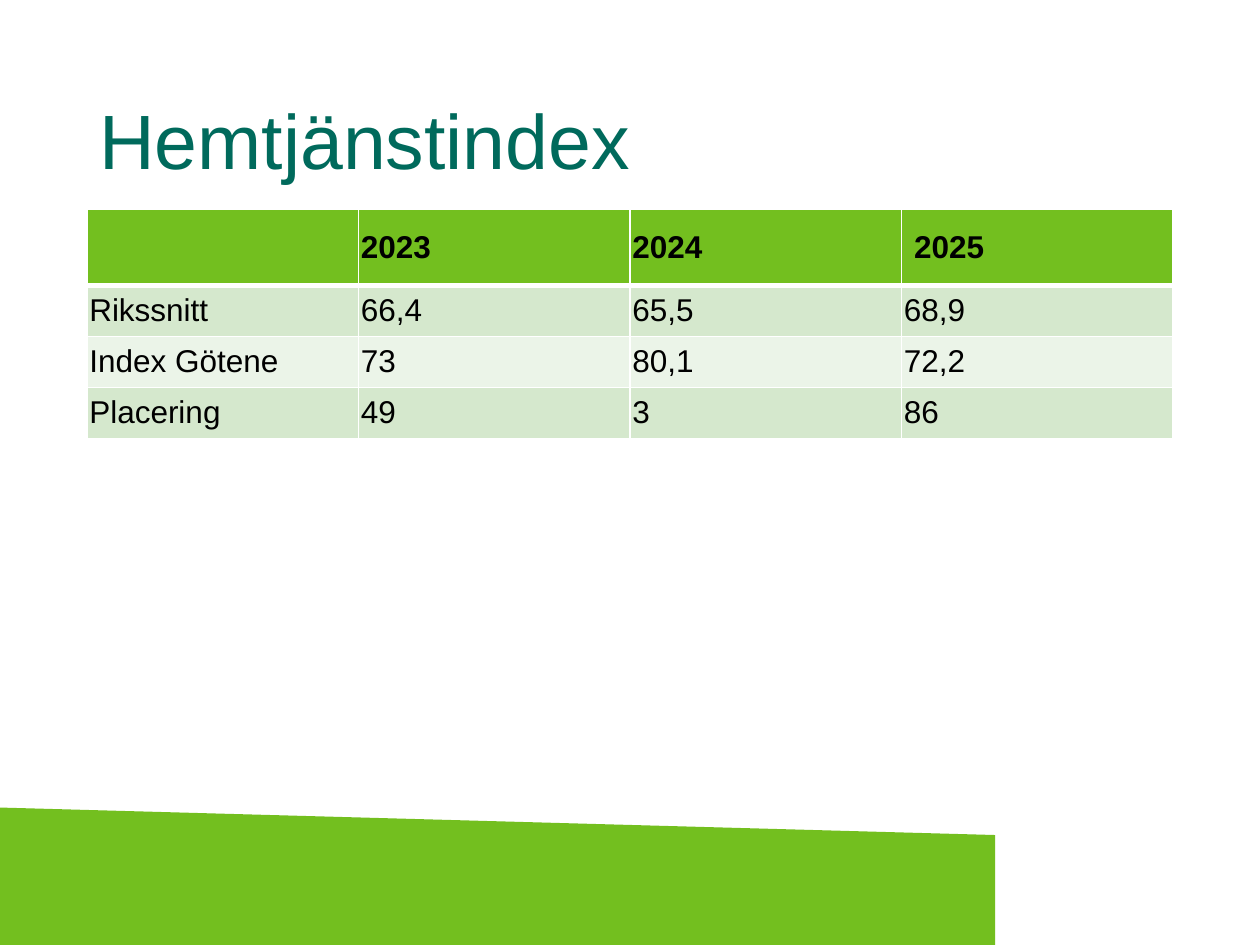
from lxml import etree
from pptx import Presentation
from pptx.dml.color import RGBColor
from pptx.enum.shapes import MSO_SHAPE
from pptx.enum.text import MSO_ANCHOR, PP_ALIGN
from pptx.oxml.ns import qn
from pptx.util import Cm, Pt

COLORS = {
    "green": "73BF1F",
    "teal": "006A5C",
    "band_dark": "D5E8CD",
    "band_light": "EBF4E8",
    "border": "FFFFFF",
    "text": "000000",
}
FONT = "Arial"
LEFT, WIDTH = Cm(1.75), Cm(21.9)
ROWS = [
    ["", "2023", "2024", "2025"],
    ["Rikssnitt", "66,4", "65,5", "68,9"],
    ["Index Götene", "73", "80,1", "72,2"],
    ["Placering", "49", "3", "86"],
]


def rgb(name):
    return RGBColor.from_string(COLORS[name])


def style_font(p, size, color, bold=False):
    p.font.name = FONT
    p.font.size = Pt(size)
    p.font.bold = bold
    p.font.color.rgb = rgb(color)


def add_footer_band(slide):
    sp = slide.shapes.add_shape(
        MSO_SHAPE.FLOWCHART_MANUAL_INPUT, 0, Cm(16.28), Cm(20.06), Cm(2.77))
    sp.shadow.inherit = False
    sp.fill.solid()
    sp.fill.fore_color.rgb = rgb("green")
    sp.line.fill.background()
    # Mirror the slope so the left side is the high one
    sp._element.spPr.find(qn("a:xfrm")).set("flipH", "1")


def set_title(slide, text):
    title = slide.shapes.title
    title.left, title.top, title.width, title.height = LEFT, Cm(1.07), WIDTH, Cm(3.68)
    tf = title.text_frame
    tf.text = text
    tf.vertical_anchor = MSO_ANCHOR.MIDDLE
    p = tf.paragraphs[0]
    p.alignment = PP_ALIGN.LEFT
    p.line_spacing = 0.9
    style_font(p, 44, "teal")


def set_borders(cell, top, bottom):
    tc_pr = cell._tc.get_or_add_tcPr()
    for side, width in (("L", 1), ("R", 1), ("T", top), ("B", bottom)):
        ln = etree.SubElement(tc_pr, qn(f"a:ln{side}"), w=str(Pt(width)))
        fill = etree.SubElement(ln, qn("a:solidFill"))
        etree.SubElement(fill, qn("a:srgbClr"), val=COLORS["border"])


def format_cell(cell, text, row, col):
    header = row == 0
    set_borders(cell, top=3 if row == 1 else 1, bottom=3 if header else 1)
    cell.fill.solid()
    band = "band_dark" if row % 2 else "band_light"
    cell.fill.fore_color.rgb = rgb("green" if header else band)
    cell.vertical_anchor = MSO_ANCHOR.MIDDLE
    # The last heading keeps the default, wider margins
    if not (header and col == len(ROWS[0]) - 1):
        cell.margin_left = cell.margin_right = Cm(0.05)
        cell.margin_top = cell.margin_bottom = Cm(0.05)
    cell.text = text
    style_font(cell.text_frame.paragraphs[0], 18, "text", bold=header)


def add_index_table(slide):
    heights = [Cm(1.53)] + [Cm(1.03)] * (len(ROWS) - 1)
    table = slide.shapes.add_table(
        len(ROWS), len(ROWS[0]), LEFT, Cm(4.22), WIDTH, sum(heights)).table
    for row, (values, height) in enumerate(zip(ROWS, heights)):
        table.rows[row].height = height
        for col, text in enumerate(values):
            format_cell(table.cell(row, col), text, row, col)


def main():
    prs = Presentation()
    prs.slide_width, prs.slide_height = Cm(25.4), Cm(19.05)
    slide = prs.slides.add_slide(prs.slide_layouts[5])  # title only
    add_footer_band(slide)
    set_title(slide, "Hemtjänstindex")
    add_index_table(slide)
    prs.save("out.pptx")


if __name__ == "__main__":
    main()
